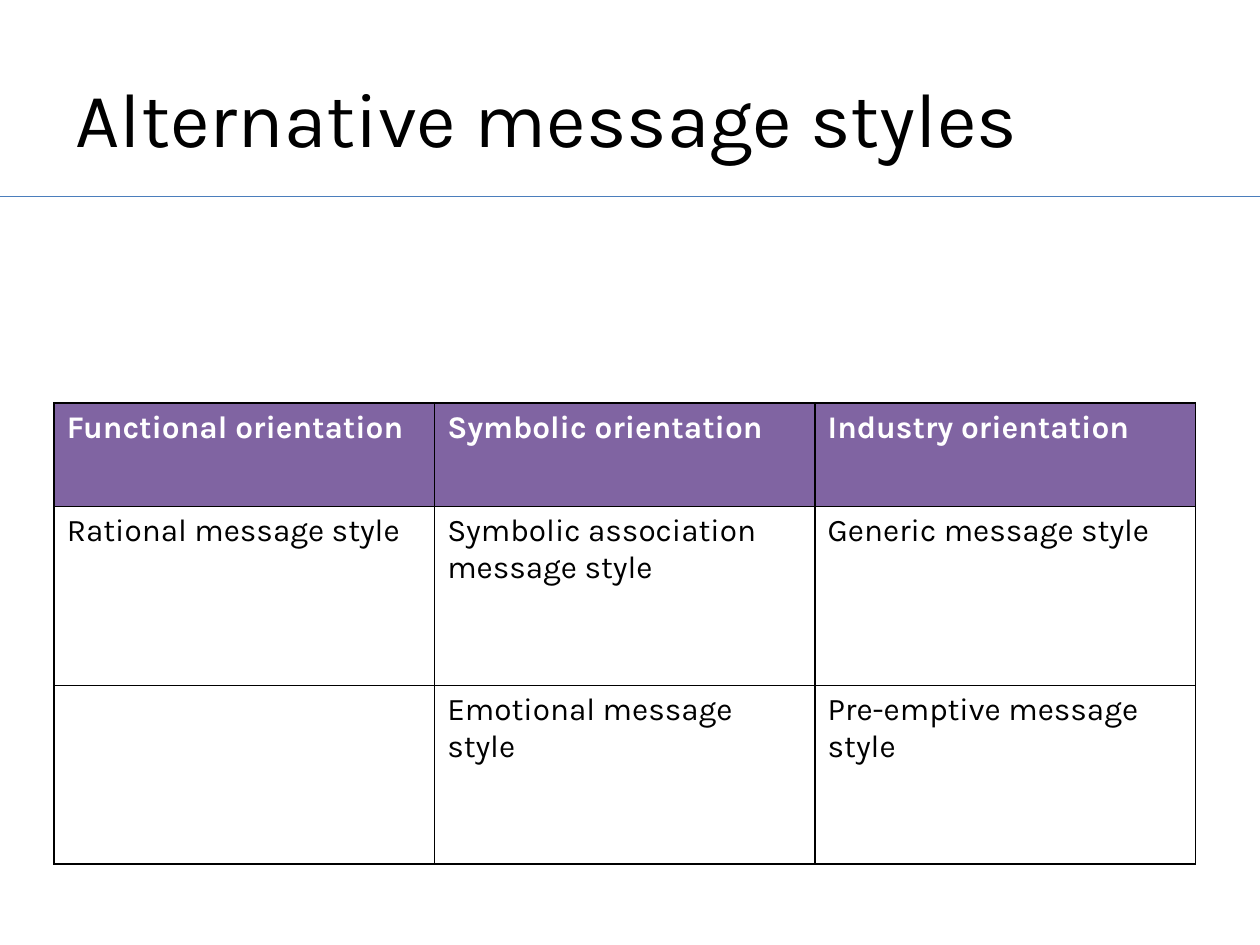
"""Build the slide on alternative message styles."""
import pptx
import pptx.dml.color
import pptx.enum.shapes
import pptx.enum.text
import pptx.oxml
import pptx.oxml.ns
import pptx.util
from pptx.util import Inches

FONT = "Karla"
BLACK, WHITE, PURPLE, BLUE = "000000", "FFFFFF", "8064A2", "4B7EBC"
STYLES = [
    ["Functional orientation", "Symbolic orientation", "Industry orientation"],
    ["Rational message style", "Symbolic association message style", "Generic message style"],
    ["", "Emotional message style", "Pre-emptive message style"],
]
COLUMN_WIDTH = 3.02
ROW_HEIGHTS = [0.82, 1.42, 1.42]


def rgb(value):
    """Return the colour for a hex string."""
    return pptx.dml.color.RGBColor.from_string(value)


def format_font(font, size, color, bold=False):
    """Apply the slide typeface with a size, colour and weight."""
    values = {"name": FONT, "size": pptx.util.Pt(size), "bold": bold}
    for key, value in values.items():
        setattr(font, key, value)
    font.color.rgb = rgb(color)


def add_title(slide, text):
    """Fill and place the title placeholder."""
    title = slide.shapes.title
    place = {"left": 0.5, "top": 0.3, "width": 9, "height": 1.25}
    for key, value in place.items():
        setattr(title, key, Inches(value))
    frame = title.text_frame
    frame.text = text
    layout = {
        "vertical_anchor": pptx.enum.text.MSO_ANCHOR.MIDDLE,
        "word_wrap": True,
        "auto_size": pptx.enum.text.MSO_AUTO_SIZE.NONE,
    }
    for key, value in layout.items():
        setattr(frame, key, value)
    heading = frame.paragraphs[0]
    heading.alignment = pptx.enum.text.PP_ALIGN.LEFT
    format_font(heading.runs[0].font, 44, BLACK)


def add_rule(slide, top, width):
    """Draw the thin line under the title across the slide."""
    rule = slide.shapes.add_connector(
        pptx.enum.shapes.MSO_CONNECTOR.STRAIGHT, 0, Inches(top), Inches(width), Inches(top))
    rule.line.color.rgb = rgb(BLUE)
    rule.line.width = pptx.util.Pt(0.75)
    properties = rule._element.spPr
    properties.append(pptx.oxml.parse_xml(f'<a:effectLst {pptx.oxml.ns.nsdecls("a")}/>'))


def add_borders(cell, color, width):
    """Give a cell the same solid border on all four sides."""
    properties = cell._tc.get_or_add_tcPr()
    for index, side in enumerate(("lnL", "lnR", "lnT", "lnB")):
        border = pptx.oxml.parse_xml(
            f'<a:{side} {pptx.oxml.ns.nsdecls("a")} w="{pptx.util.Pt(width)}">'
            f'<a:solidFill><a:srgbClr val="{color}"/></a:solidFill></a:{side}>')
        properties.insert(index, border)


def format_cell(cell, text, is_header):
    """Write a cell and set its fill, font and borders."""
    if is_header:
        cell.fill.solid()
        cell.fill.fore_color.rgb = rgb(PURPLE)
    else:
        cell.fill.background()
    cell.text = text
    color = WHITE if is_header else BLACK
    paragraph = cell.text_frame.paragraphs[0]
    for part in paragraph.runs or [paragraph]:
        format_font(part.font, 18, color, is_header)
    add_borders(cell, BLACK, 1)


def add_style_table(slide, left, top):
    """Add the table of message styles by orientation."""
    width = COLUMN_WIDTH * len(STYLES[0])
    table = slide.shapes.add_table(
        len(STYLES), len(STYLES[0]), Inches(left), Inches(top),
        Inches(width), Inches(sum(ROW_HEIGHTS))).table
    table.horz_banding = False
    for column in table.columns:
        column.width = Inches(COLUMN_WIDTH)
    for row_index, texts in enumerate(STYLES):
        table.rows[row_index].height = Inches(ROW_HEIGHTS[row_index])
        for column_index, text in enumerate(texts):
            format_cell(table.cell(row_index, column_index), text, row_index == 0)


def main():
    """Create and save the presentation."""
    deck = pptx.Presentation()
    deck.slide_width, deck.slide_height = Inches(10), Inches(7.5)
    slide = deck.slides.add_slide(deck.slide_layouts[5])
    add_rule(slide, 1.56, 10)
    add_title(slide, "Alternative message styles")
    add_style_table(slide, 0.43, 3.2)
    deck.save("out.pptx")


if __name__ == "__main__":
    main()
